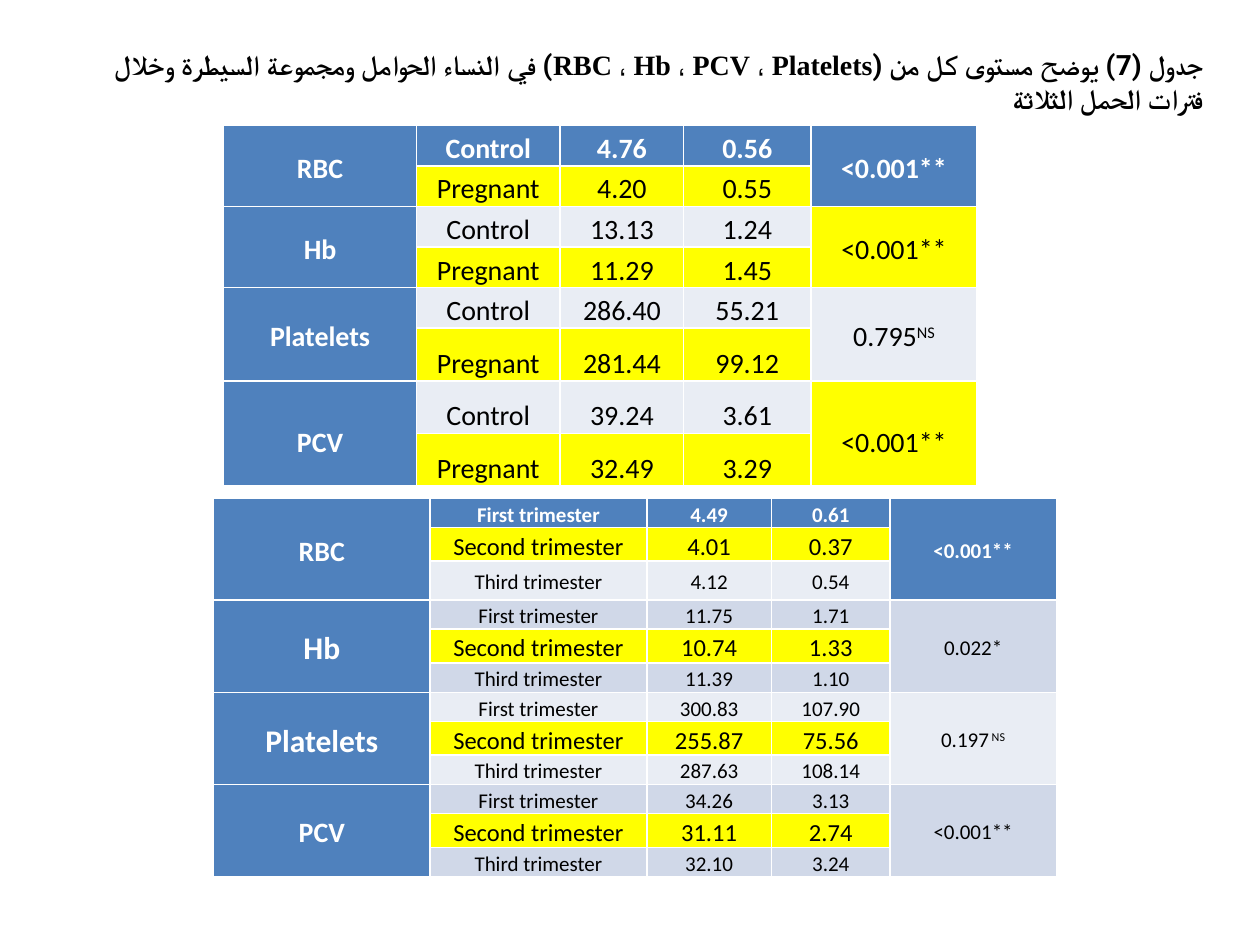
from lxml.etree import SubElement
from pptx import Presentation
from pptx.dml.color import RGBColor
from pptx.enum.text import MSO_ANCHOR, PP_ALIGN
from pptx.oxml.ns import qn
from pptx.util import Pt

COLORS = {"blue": "4F81BD", "yellow": "FFFF00", "light": "E9EDF4",
          "band": "D0D8E8", "white": "FFFFFF", "black": "000000"}

TITLE = [("جدول (7) يوضح مستوى كل من (", "Roboto"),
         ("RBC ، Hb ، PCV ، Platelets) في النساء الحوامل "
          "ومجموعة السيطرة وخلال فترات الحمل الثلاثة", "Times New Roman")]

CONTROL_GROUPS = [
    ("RBC", 16, "<0.001**", "blue", "light",
     [("Control", "4.76", "0.56"), ("Pregnant", "4.20", "0.55")]),
    ("Hb", 16, "<0.001**", "yellow", "light",
     [("Control", "13.13", "1.24"), ("Pregnant", "11.29", "1.45")]),
    ("Platelets", 16, "0.795^NS", "light", "light",
     [("Control", "286.40", "55.21"), ("Pregnant", "281.44", "99.12")]),
    ("PCV", 16, "<0.001**", "yellow", "light",
     [("Control", "39.24", "3.61"), ("Pregnant", "32.49", "3.29")]),
]

TRIMESTERS = ("First trimester", "Second trimester", "Third trimester")
TRIMESTER_GROUPS = [
    (label, size, p_value, p_fill, band,
     [(name, *pair) for name, pair in zip(TRIMESTERS, pairs)])
    for label, size, p_value, p_fill, band, pairs in [
        ("RBC", 16, "<0.001**", "blue", "light",
         [("4.49", "0.61"), ("4.01", "0.37"), ("4.12", "0.54")]),
        ("Hb", 18, "0.022*", "band", "band",
         [("11.75", "1.71"), ("10.74", "1.33"), ("11.39", "1.10")]),
        ("Platelets", 18, "0.197^ NS", "light", "light",
         [("300.83", "107.90"), ("255.87", "75.56"), ("287.63", "108.14")]),
        ("PCV", 16, "<0.001**", "band", "band",
         [("34.26", "3.13"), ("31.11", "2.74"), ("32.10", "3.24")]),
    ]
]


def fill_cell(cell, content, fill, size, spacing):
    """Write one cell; the part after a caret is superscript."""
    cell.fill.solid()
    cell.fill.fore_color.rgb = RGBColor.from_string(COLORS[fill])
    paragraph = cell.text_frame.paragraphs[0]
    paragraph.alignment = PP_ALIGN.CENTER
    paragraph.line_spacing = spacing
    for position, part in enumerate(content.split("^")):
        run = paragraph.add_run()
        run.text = part
        font = run.font
        font.name, font.size, font.bold = "Calibri", Pt(size), fill == "blue"
        ink = "white" if fill == "blue" else "black"
        font.color.rgb = RGBColor.from_string(COLORS[ink])
        if position:
            font._element.set("baseline", "30000")


def prepare_cell(cell, insets, size):
    """Set insets and anchor, and keep covered cells from growing a row."""
    cell.margin_left = cell.margin_right = Pt(insets[0])
    cell.margin_top, cell.margin_bottom = Pt(insets[1]), Pt(0)
    cell.vertical_anchor = MSO_ANCHOR.MIDDLE
    if cell.is_spanned:
        ending = SubElement(cell.text_frame.paragraphs[0]._p, qn("a:endParaRPr"))
        ending.set("sz", str(size * 100))


def add_results(slide, box, groups, widths, heights, insets, sizes, spacings):
    """Add a table of grouped blood values with one p-value per group."""
    left, top, width, height = map(Pt, box)
    table = slide.shapes.add_table(len(heights), len(widths),
                                   left, top, width, height).table
    for column, column_width in zip(table.columns, widths):
        column.width = Pt(column_width)
    for row, row_height in zip(table.rows, heights):
        row.height = Pt(row_height)

    first = 0
    for label, label_size, p_value, p_fill, band, measures in groups:
        last = first + len(measures) - 1
        for column in (0, 4):
            table.cell(first, column).merge(table.cell(last, column))
        fill_cell(table.cell(first, 0), label, "blue", label_size, spacings[first])
        fill_cell(table.cell(first, 4), p_value, p_fill, sizes[0], spacings[first])
        for offset, measure in enumerate(measures):
            row = first + offset
            highlighted = offset == 1
            fill = "yellow" if highlighted else "blue" if row == 0 else band
            for column, content in enumerate(measure, start=1):
                fill_cell(table.cell(row, column), content, fill,
                          sizes[highlighted], spacings[row])
            for column in range(len(widths)):
                prepare_cell(table.cell(row, column), insets, sizes[0])
        first = last + 1


def add_title(slide, box):
    """Add the right-to-left table caption."""
    frame = slide.shapes.add_textbox(*map(Pt, box)).text_frame
    frame.word_wrap = True
    frame.vertical_anchor = MSO_ANCHOR.TOP
    caption = frame.paragraphs[0]
    caption.alignment = PP_ALIGN.RIGHT
    caption._p.get_or_add_pPr().set("rtl", "1")
    for content, typeface in TITLE:
        run = caption.add_run()
        run.text = content
        run.font.name, run.font.size, run.font.bold = typeface, Pt(16), True
        run.font.color.rgb = RGBColor.from_string(COLORS["black"])
        SubElement(run.font._element, qn("a:cs")).set("typeface", "Roboto")


def main():
    """Build and save the slide."""
    deck = Presentation()
    deck.slide_width, deck.slide_height = Pt(720), Pt(540)
    slide = deck.slides.add_slide(deck.slide_layouts[6])
    add_results(slide, (127.8, 71.6, 430.6, 202.25), CONTROL_GROUPS,
                (110.2, 82.1, 70.6, 72.7, 95), [22.75] * 5 + [29.5] * 3,
                (0.7, 0.7), (16, 16), [1.15] * 5 + [1.5] * 3)
    add_title(slide, (42.5, 23.8, 652.3, 67.7))
    add_results(slide, (122, 284.7, 481.7, 215.1), TRIMESTER_GROUPS,
                (123.8, 123.8, 71.3, 67.7, 95.1),
                [16.6, 19.1, 22.3] + [16.6, 19.1, 16.8] * 3,
                (5, 0), (12, 14), [1.15] * 12)
    deck.save("out.pptx")


if __name__ == "__main__":
    main()
